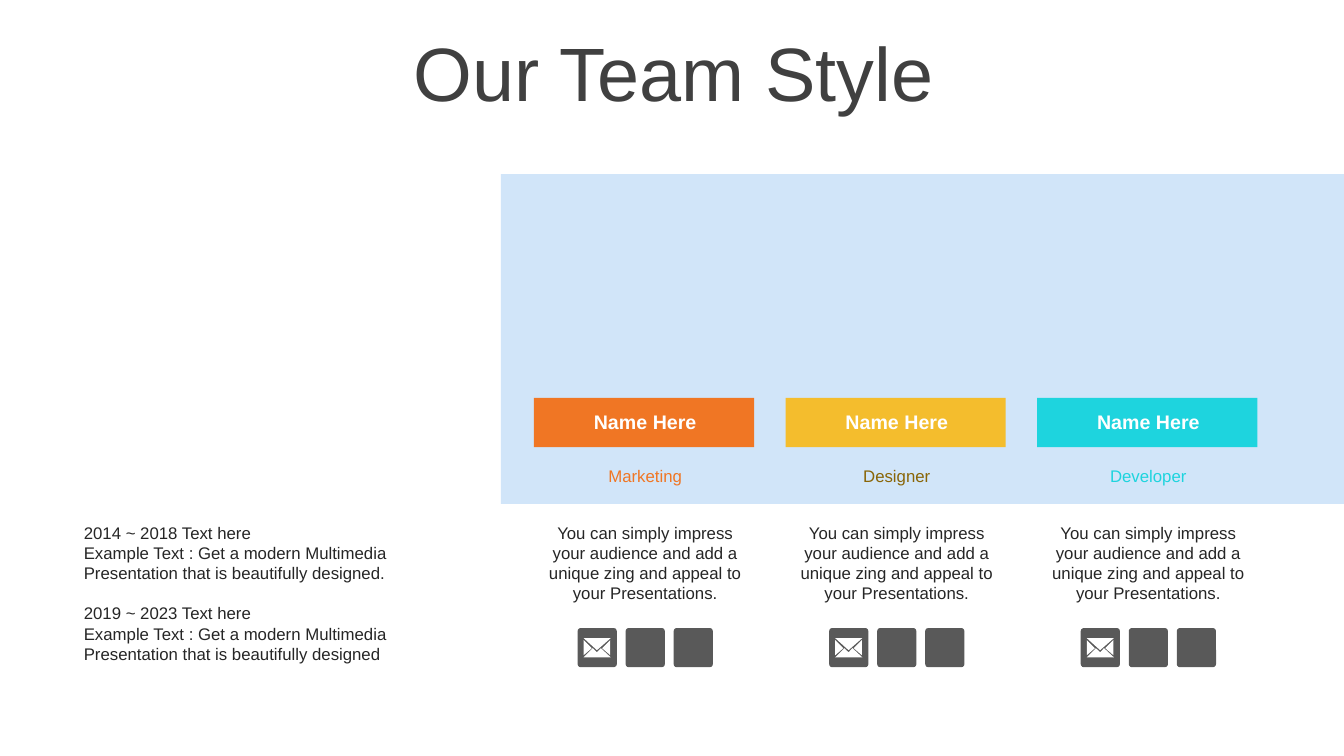
from dataclasses import dataclass

from pptx import Presentation
from pptx.dml.color import RGBColor
from pptx.enum.shapes import MSO_SHAPE
from pptx.enum.text import MSO_ANCHOR, MSO_AUTO_SIZE, PP_ALIGN
from pptx.util import Pt

RECT, ROUNDED = MSO_SHAPE.RECTANGLE, MSO_SHAPE.ROUNDED_RECTANGLE
TOP, MIDDLE = MSO_ANCHOR.TOP, MSO_ANCHOR.MIDDLE
LEFT, CENTER = PP_ALIGN.LEFT, PP_ALIGN.CENTER
FIT_SHAPE, FIT_NONE = MSO_AUTO_SIZE.SHAPE_TO_FIT_TEXT, MSO_AUTO_SIZE.NONE


@dataclass(frozen=True)
class Theme:
    font: str = "Arial"
    title_size: float = 54
    name_size: float = 14
    body_size: float = 12
    title: str = "404040"
    body: str = "262626"
    white: str = "FFFFFF"
    panel: str = "D1E5F9"
    icon: str = "595959"
    orange: str = "F07624"
    yellow: str = "F4BD2D"
    brown: str = "896507"
    cyan: str = "1ED4DE"


COLUMN_STEP = 179.7
ICON_STEP = 34.3
ICON_SIZE = 28
ICON_TOP = 448.6
ENVELOPE = [
    [(4.3, 7.2), (13.8, 15.8), (23.6, 7.2)],
    [(4.3, 8.6), (4.3, 19.4), (10.1, 14.4)],
    [(23.3, 8.6), (17.5, 14.4), (23.3, 19.4)],
    [(16.6, 14.4), (13.8, 17.3), (10.8, 14.4), (4.3, 20.9), (23.6, 20.9)],
]
BLURB = ("You can simply impress your audience and add a unique zing "
         "and appeal to your Presentations.")
EXAMPLE = ("Example Text : Get a modern Multimedia Presentation "
           "that is beautifully designed")


class TeamSlide:
    def __init__(self, prs, theme):
        self.theme = theme
        self.s = prs.slides.add_slide(prs.slide_layouts[6])

    def paint(self, sp, color):
        sp.shadow.inherit = False
        sp.fill.solid()
        sp.fill.fore_color.rgb = RGBColor.from_string(color)
        sp.line.fill.background()

    def box(self, x, y, w, h, color, kind=RECT, shapes=None):
        if shapes is None:
            shapes = self.s.shapes
        sp = shapes.add_shape(kind, Pt(x), Pt(y), Pt(w), Pt(h))
        self.paint(sp, color)
        return sp

    def text(self, x, y, w, h, lines, size, color, bold=False,
             align=CENTER, anchor=TOP, grow=False, spacing=None, gap_at=None):
        sp = self.s.shapes.add_textbox(Pt(x), Pt(y), Pt(w), Pt(h))
        tf = sp.text_frame
        tf.word_wrap = True
        tf.auto_size = FIT_SHAPE if grow else FIT_NONE
        tf.vertical_anchor = anchor
        for i, line in enumerate(lines):
            p = tf.add_paragraph() if i else tf.paragraphs[0]
            p.alignment = align
            if spacing:
                p.line_spacing = spacing
            if i and i == gap_at:
                p.space_before = Pt(14.4)
            r = p.add_run()
            r.text = line
            r.font.name = self.theme.font
            r.font.size = Pt(size)
            r.font.bold = bold
            r.font.color.rgb = RGBColor.from_string(color)

    def envelope(self, x, y, shapes):
        flaps = [[(Pt(x + dx), Pt(y + dy)) for dx, dy in flap]
                 for flap in ENVELOPE]
        builder = shapes.build_freeform(*flaps[0][0])
        for i, flap in enumerate(flaps):
            if i:
                builder.move_to(*flap[0])
            builder.add_line_segments(flap[1:], close=True)
        self.paint(builder.convert_to_shape(), self.theme.white)

    def contact_icons(self, x):
        shapes = self.s.shapes.add_group_shape().shapes
        for i in range(3):
            sp = self.box(x + i * ICON_STEP, ICON_TOP, ICON_SIZE, ICON_SIZE,
                          self.theme.icon, ROUNDED, shapes)
            sp.adjustments[0] = 0.08
        self.envelope(x, ICON_TOP, shapes)

    def member(self, column, role, bar_color, role_color):
        t = self.theme
        shift = column * COLUMN_STEP
        x = 382.8 + shift
        self.box(381.4 + shift, 284.3, 157.3, 35.2, bar_color)
        self.text(x, 289.4, 156.2, 25.2, ["Name Here"], t.name_size,
                  t.white, bold=True)
        self.text(x, 326.9, 156.2, 25.2, [role], t.body_size, role_color,
                  anchor=MIDDLE)
        self.text(x, 369.7, 156.2, 65.5, [BLURB], t.body_size, t.body,
                  grow=True)
        self.contact_icons(412.6 + shift)


def main():
    prs = Presentation()
    prs.slide_width, prs.slide_height = Pt(960), Pt(540)
    t = Theme()
    slide = TeamSlide(prs, t)
    slide.box(357.8, 124.3, 602.2, 235.6, t.panel)
    slide.text(25.4, 26.6, 911.5, 56.9, ["Our Team Style"], t.title_size,
               t.title, anchor=MIDDLE, spacing=0.9)
    members = [
        ("Marketing", t.orange, t.orange),
        ("Designer", t.yellow, t.brown),
        ("Developer", t.cyan, t.cyan),
    ]
    for column, member in enumerate(members):
        slide.member(column, *member)
    history = ["2014 ~ 2018 Text here", EXAMPLE + ".",
               "2019 ~ 2023 Text here", EXAMPLE]
    slide.text(52.8, 369.7, 268.6, 108.7, history, t.body_size, t.body,
               align=LEFT, grow=True, gap_at=2)
    prs.save("out.pptx")


if __name__ == "__main__":
    main()
